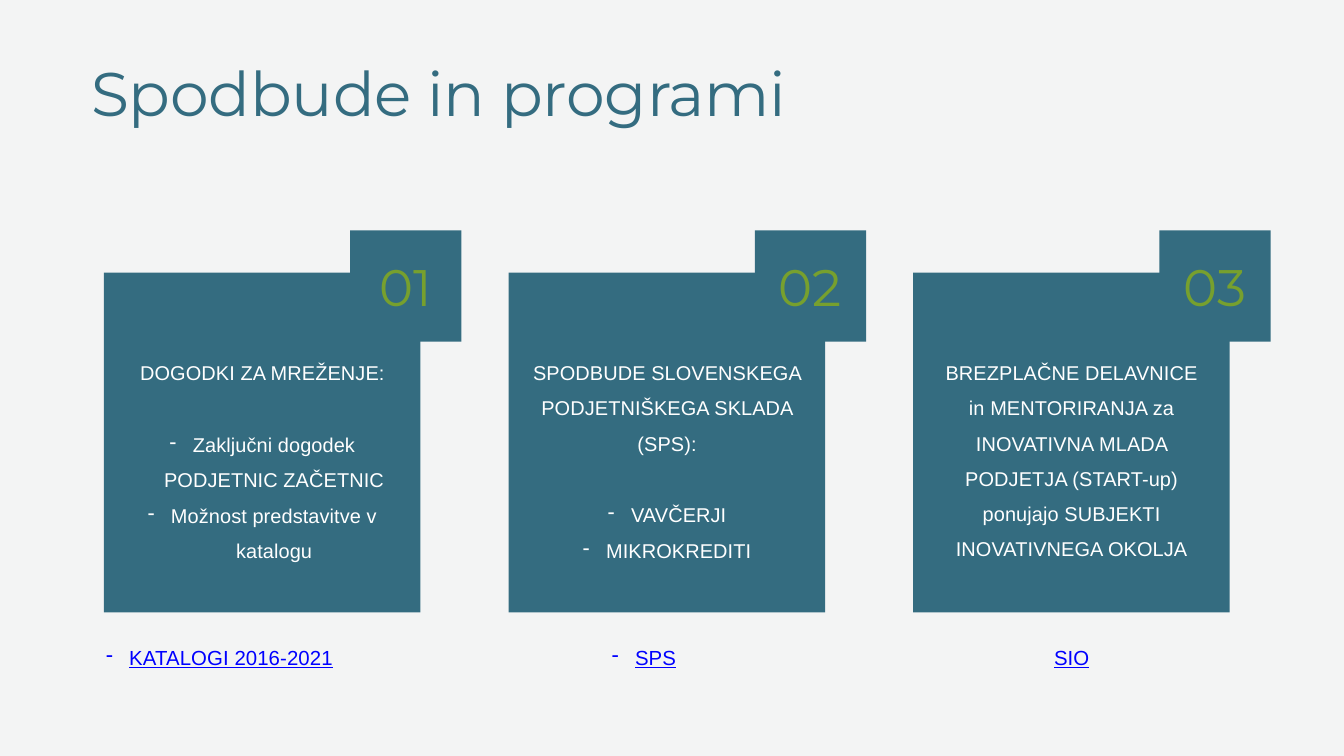
from lxml.etree import SubElement
from pptx import Presentation
from pptx.dml.color import RGBColor
from pptx.enum.shapes import MSO_SHAPE
from pptx.enum.text import MSO_ANCHOR, MSO_AUTO_SIZE, PP_ALIGN
from pptx.oxml.ns import qn
from pptx.util import Pt

EMU_PER_PX = 9144
TITLE_ONLY = 5

CARD_LEFT, CARD_STEP = 170, 662
CARDS = [
    ("DOGODKI ZA MREŽENJE:",
     ["Zaključni dogodek PODJETNIC ZAČETNIC", "Možnost predstavitve v katalogu"]),
    ("SPODBUDE SLOVENSKEGA PODJETNIŠKEGA SKLADA (SPS):",
     ["VAVČERJI", "MIKROKREDITI"]),
    ("BREZPLAČNE DELAVNICE in MENTORIRANJA za INOVATIVNA MLADA PODJETJA "
     "(START-up) ponujajo SUBJEKTI INOVATIVNEGA OKOLJA", []),
]
LINKS = [
    ("KATALOGI 2016-2021", 161, 395, True),
    ("SPS", 989, 128, True),
    ("SIO", 1713, 80, False),
]


def px(length):
    return length * EMU_PER_PX


def color(value):
    return RGBColor.from_string(value)


class SlideBuilder:
    teal = "346C80"
    green = "77A02E"
    white = "FFFFFF"
    blue = "0000FF"
    paper = "F3F4F4"
    heading_font = "Montserrat"
    body_font = "Arial"
    body_spacing = 1.47

    def __init__(self, presentation):
        layout = presentation.slide_layouts[TITLE_ONLY]
        self.slide = presentation.slides.add_slide(layout)
        fill = self.slide.background.fill
        fill.solid()
        fill.fore_color.rgb = color(self.paper)

    def margins(self, frame, left, top, right, bottom):
        frame.margin_left, frame.margin_top = px(left), px(top)
        frame.margin_right, frame.margin_bottom = px(right), px(bottom)

    def run(self, paragraph, text, font_name, size, text_color, tracking):
        run = paragraph.add_run()
        run.text = text
        run.font.name = font_name
        run.font.size = Pt(size)
        run.font.color.rgb = color(text_color)
        run._r.get_or_add_rPr().set("spc", str(tracking))
        return run

    def body_paragraph(self, paragraph, text, size, text_color, bullet=False):
        properties = paragraph._p.get_or_add_pPr()
        properties.set("marL", str(px(39 if bullet else 1)))
        properties.set("indent", str(px(-38 if bullet else 0)))
        if bullet:
            SubElement(properties, qn("a:buChar")).set("char", "-")
        paragraph.alignment = PP_ALIGN.CENTER
        paragraph.line_spacing = self.body_spacing
        return self.run(paragraph, text, self.body_font, size, text_color, 10)

    def title(self, text, left, top, width, height):
        shape = self.slide.shapes.title
        shape.left, shape.top = px(left), px(top)
        shape.width, shape.height = px(width), px(height)
        frame = shape.text_frame
        self.margins(frame, 0, 18, 0, 0)
        frame.vertical_anchor = MSO_ANCHOR.TOP
        frame.auto_size = MSO_AUTO_SIZE.NONE
        paragraph = frame.paragraphs[0]
        paragraph.alignment = PP_ALIGN.LEFT
        paragraph.line_spacing = Pt(76.4)
        self.run(paragraph, text, self.heading_font, 72.5, self.teal, -20)

    def block(self, group, left, top, width, height):
        shape = group.shapes.add_shape(
            MSO_SHAPE.RECTANGLE, px(left), px(top), px(width), px(height))
        shape.shadow.inherit = False
        shape.fill.solid()
        shape.fill.fore_color.rgb = color(self.teal)
        shape.line.fill.background()
        shape.text_frame.word_wrap = True
        return shape.text_frame

    def card(self, number, left, heading, items):
        group = self.slide.shapes.add_group_shape()
        frame = self.block(group, left, 446, 518, 556)
        self.margins(frame, 39, 126, 39, 0)
        frame.vertical_anchor = MSO_ANCHOR.TOP
        self.body_paragraph(frame.paragraphs[0], heading, 23.5, self.white)
        for index, item in enumerate(items):
            paragraph = frame.add_paragraph()
            self.body_paragraph(paragraph, item, 23.5, self.white, bullet=True)
            paragraph.space_before = Pt(0.9 if index else 43)

        badge = self.block(group, left + 403, 377, 182, 182)
        self.margins(badge, 0, 0, 0, 0)
        badge.vertical_anchor = MSO_ANCHOR.MIDDLE
        paragraph = badge.paragraphs[0]
        paragraph.alignment = PP_ALIGN.CENTER
        self.run(paragraph, f"{number:02}", self.heading_font, 60.5, self.green, -10)

    def link(self, text, left, width, bullet):
        shape = self.slide.shapes.add_textbox(px(left), px(1032), px(width), px(69))
        frame = shape.text_frame
        frame.word_wrap = False
        frame.auto_size = MSO_AUTO_SIZE.SHAPE_TO_FIT_TEXT
        run = self.body_paragraph(frame.paragraphs[0], text, 24, self.blue, bullet)
        run.font.underline = True


def main():
    presentation = Presentation()
    presentation.slide_width, presentation.slide_height = px(2199), px(1237)
    builder = SlideBuilder(presentation)
    builder.title("Spodbude in programi", 149, 87, 1201, 124)
    for index, (heading, items) in enumerate(CARDS):
        builder.card(index + 1, CARD_LEFT + index * CARD_STEP, heading, items)
    for link in LINKS:
        builder.link(*link)
    presentation.save("out.pptx")


if __name__ == "__main__":
    main()
